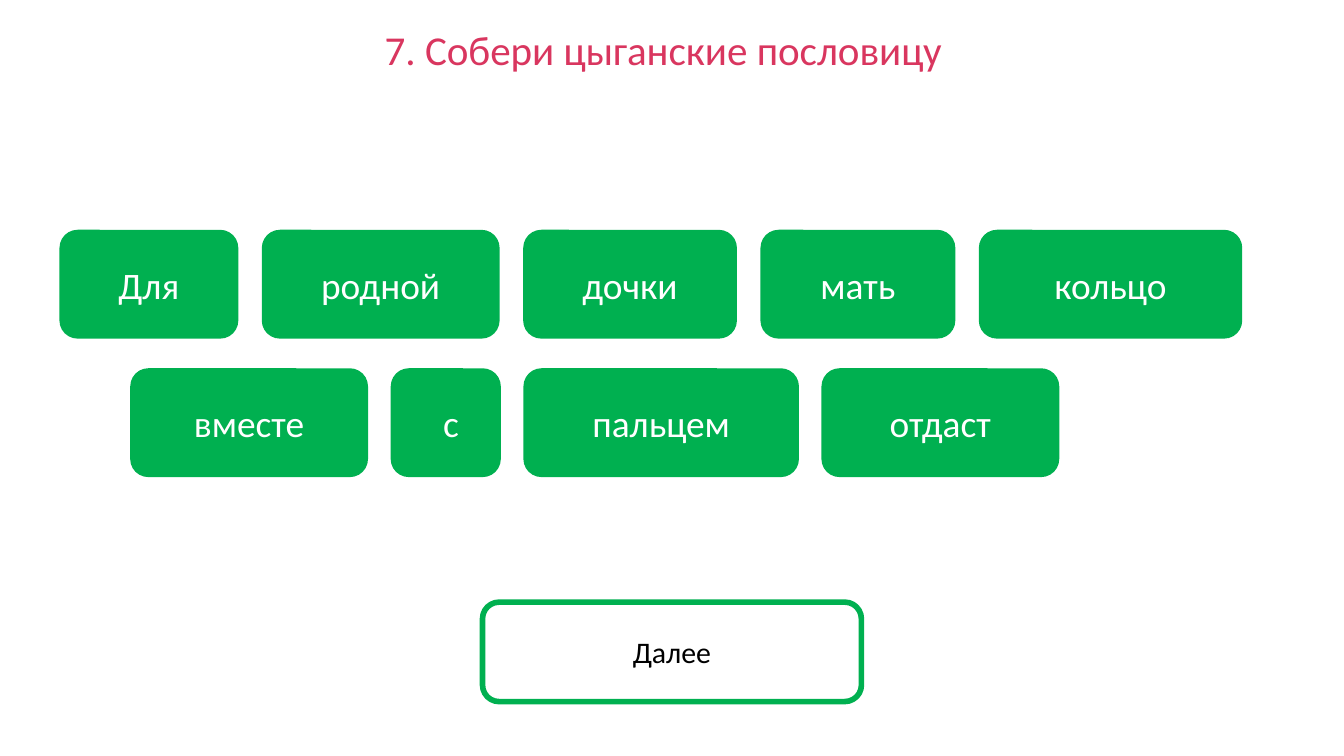
import pptx
import pptx.util
import pptx.dml.color
import pptx.enum.shapes
import pptx.enum.text

Pt = pptx.util.Pt
RGB = pptx.dml.color.RGBColor.from_string
MID = pptx.enum.text.MSO_ANCHOR.MIDDLE

HEAD = "7. Собери цыганские пословицу"
ROWS = [
    {"left": 31.9, "top": 123.1, "gap": 12.6,
     "words": [("Для", 95.8), ("родной", 127.4), ("дочки", 114.5),
               ("мать", 104.4), ("кольцо", 141.1)]},
    {"left": 69.8, "top": 197.3, "gap": 12.1,
     "words": [("вместе", 127.4), ("с", 59), ("пальцем", 147.6),
               ("отдаст", 127.4)]},
]
NEXT = ("Далее", (258.5, 322.6, 203, 53.3))
TILE = 58.3

THEME = {
    "font": "Calibri",
    "green": "00B050", "white": "FFFFFF", "black": "000000", "rose": "D9365F",
    "head": 22, "word": 20, "next": 16, "line": 3,
}


def write(shape, text, size, color, pad):
    frame = shape.text_frame
    frame.word_wrap = True
    frame.auto_size = pptx.enum.text.MSO_AUTO_SIZE.NONE
    frame.vertical_anchor = MID
    frame.margin_left = frame.margin_right = Pt(pad[0])
    frame.margin_top = frame.margin_bottom = Pt(pad[1])
    para = frame.paragraphs[0]
    para.alignment = pptx.enum.text.PP_ALIGN.CENTER
    run = para.add_run()
    run.text = text
    run.font.name = THEME["font"]
    run.font.size = Pt(THEME[size])
    run.font.color.rgb = RGB(THEME[color])


def button(slide, box, text, size, color, solid):
    kind = pptx.enum.shapes.MSO_SHAPE.ROUNDED_RECTANGLE
    shape = slide.shapes.add_shape(kind, *map(Pt, box))
    shape.shadow.inherit = False
    if solid:
        shape.fill.solid()
        shape.fill.fore_color.rgb = RGB(THEME["green"])
        shape.line.fill.background()
    else:
        shape.fill.background()
        shape.line.color.rgb = RGB(THEME["green"])
        shape.line.width = Pt(THEME["line"])
    write(shape, text, size, color, (28.1, 14.4))


def main():
    deck = pptx.Presentation()
    deck.slide_width, deck.slide_height = Pt(720), Pt(405)
    slide = deck.slides.add_slide(deck.slide_layouts[5])

    title = slide.shapes.title
    title.left, title.top, title.width, title.height = map(
        Pt, (128.2, 9.4, 454.3, 33.8))
    write(title, HEAD, "head", "rose", (7.2, 3.6))

    for row in ROWS:
        left = row["left"]
        for word, width in row["words"]:
            box = (left, row["top"], width, TILE)
            button(slide, box, word, "word", "white", True)
            left += width + row["gap"]

    text, box = NEXT
    button(slide, box, text, "next", "black", False)
    deck.save("out.pptx")


if __name__ == "__main__":
    main()
